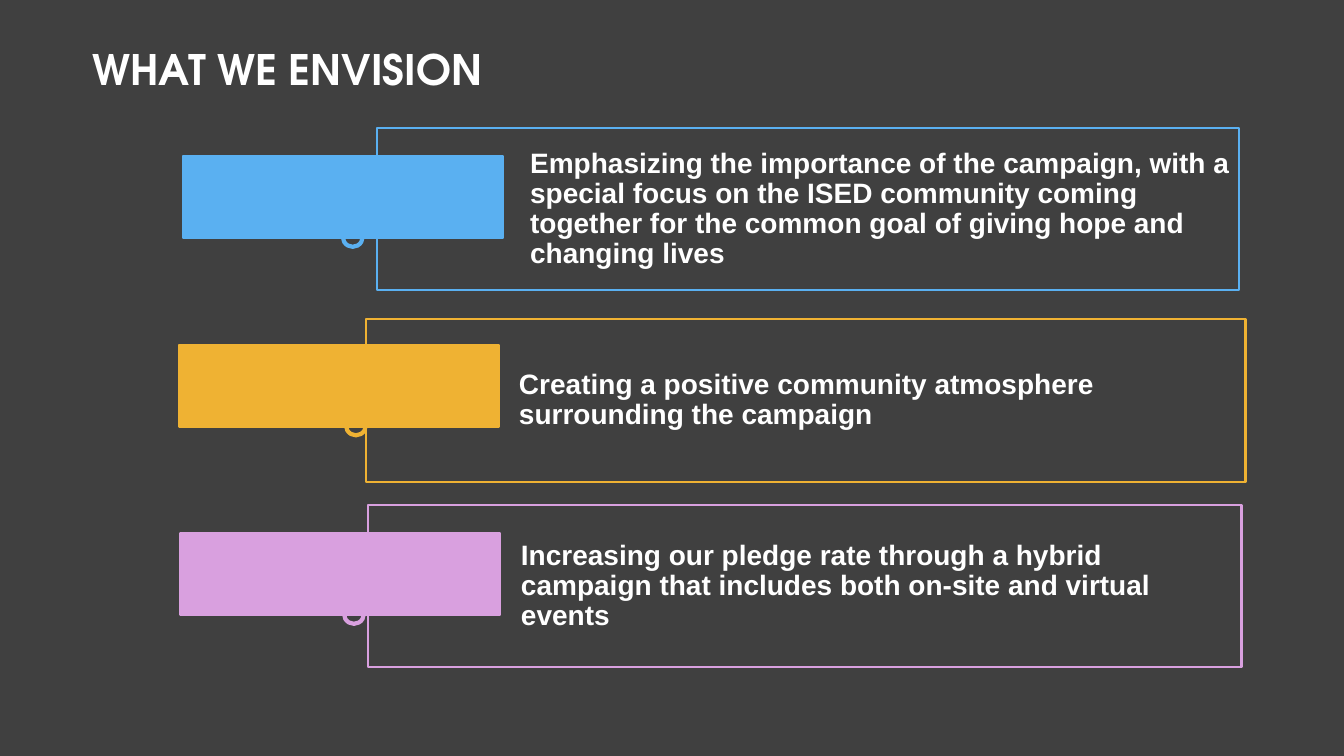
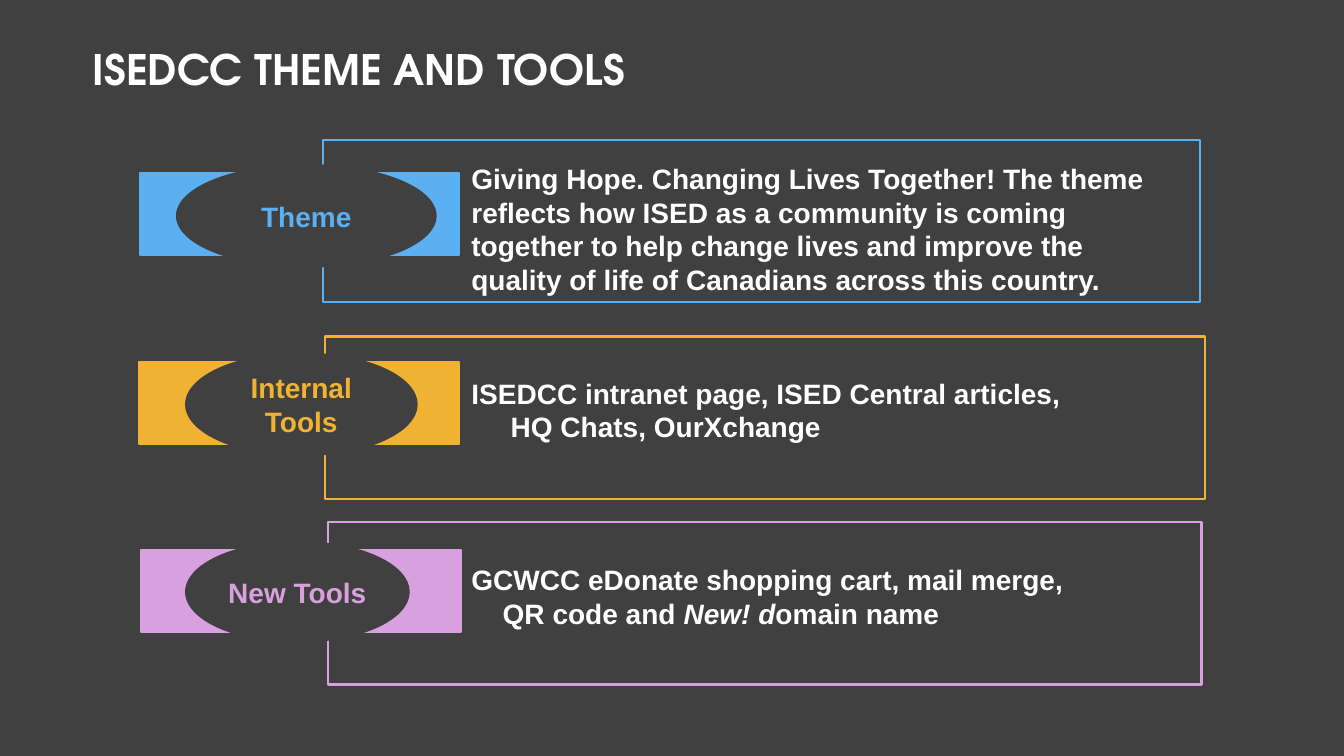
from dataclasses import dataclass

from lxml import etree
from pptx import Presentation
from pptx.dml.color import RGBColor
from pptx.enum.shapes import MSO_SHAPE
from pptx.enum.text import MSO_ANCHOR, MSO_AUTO_SIZE, PP_ALIGN
from pptx.util import Cm, Pt

RECT, OVAL = MSO_SHAPE.RECTANGLE, MSO_SHAPE.OVAL
TOP, MIDDLE = MSO_ANCHOR.TOP, MSO_ANCHOR.MIDDLE
LEFT, CENTER = PP_ALIGN.LEFT, PP_ALIGN.CENTER
FIXED = MSO_AUTO_SIZE.NONE


@dataclass(frozen=True)
class Theme:
    back: str = "404040"
    text: str = "FFFFFF"
    rows: tuple = ("5AB0F1", "EFB233", "D9A0DF")
    head: str = "TeX Gyre Adventor"
    body: str = "Arial"
    big: int = 30
    size: int = 20
    line: float = 1.5


THEME = Theme()
TITLE = (2.08, 0.53, 29.57, 2.54)
BAR_W, BAR_H = 8.05, 2.06
BOX_H = 4.09
PITCH = 4.75
RING = 0.5

GOALS = (
    ((9.5, 3.23, 21.72), 4.62, 8.89,
     "Emphasizing the importance of the campaign, with a special focus on the "
     "ISED community coming together for the common goal of giving hope and "
     "changing lives"),
    ((9.22, 8.05, 22.17), 4.52, 8.97,
     "Creating a positive community atmosphere surrounding the campaign"),
    ((9.27, 12.73, 22.02), 4.55, 8.92,
     "Increasing our pledge rate through a hybrid campaign that includes both "
     "on-site and virtual events"),
)

TOOLS = (
    ((8.15, 3.53, 22.1), 3.53, "Theme", (4.47, 6.5, 2.54),
     (11.63, 3.94, 17.98, 3.68), 0,
     [[("Giving Hope. Changing Lives Together! The theme reflects how ISED as a "
        "community is coming together to help change lives and improve the "
        "quality of life of Canadians across this country.", False)]]),
    ((8.2, 8.48, 22.17), 3.51, "Internal Tools", (4.7, 5.79, 2.54),
     (11.63, 9.35, 17.98, 1.96), 0.99,
     [[("ISEDCC intranet page, ISED Central articles,", False)],
      [("HQ Chats, OurXchange", False)]]),
    ((8.26, 13.16, 22.02), 3.56, "New Tools", (4.7, 5.59, 2.49),
     (11.63, 14.05, 17.53, 1.96), 0.79,
     [[("GCWCC eDonate shopping cart, mail merge,", False)],
      [("QR code and ", False), ("New! d", True), ("omain name", False)]]),
)


def rgb(tone):
    return RGBColor.from_string(tone)


def place(box):
    return [Cm(n) for n in box]


def add_run(para, text, tone=THEME.text, font=THEME.body, size=THEME.size,
            slant=False):
    run = para.add_run()
    run.text = text
    run.font.name = font
    run.font.size = Pt(size)
    run.font.bold = True
    run.font.italic = slant
    run.font.color.rgb = rgb(tone)


def set_frame(shape, anchor, pads, align=LEFT):
    frame = shape.text_frame
    frame.word_wrap = True
    frame.auto_size = FIXED
    frame.vertical_anchor = anchor
    (frame.margin_left, frame.margin_top,
     frame.margin_right, frame.margin_bottom) = place(pads)
    para = frame.paragraphs[0]
    para.alignment = align
    return para


def add_shape(slide, kind, box, line, fill=None, width=THEME.line):
    shape = slide.shapes.add_shape(kind, *place(box))
    shape.shadow.inherit = False
    if fill:
        shape.fill.solid()
        shape.fill.fore_color.rgb = rgb(fill)
    else:
        shape.fill.background()
    shape.line.color.rgb = rgb(line)
    shape.line.width = Pt(width)
    return shape


def add_box(slide, spot, tone):
    return add_shape(slide, RECT, (*spot, BOX_H), tone)


def add_bar(slide, left, top, tone):
    add_shape(slide, RECT, (left, top, BAR_W, BAR_H), tone, tone)


def add_ring(slide, mid, base, tone):
    box = (mid - RING / 2, base - 0.28, RING, RING)
    add_shape(slide, OVAL, box, tone, width=3)


def add_label(slide, box, text, tone):
    oval = add_shape(slide, OVAL, box, THEME.back, THEME.back, 2)
    add_run(set_frame(oval, MIDDLE, (0, 0, 0, 0), CENTER), text, tone)


def add_note(slide, box, hang, lines):
    note = slide.shapes.add_textbox(*place(box))
    para = set_frame(note, TOP, (0.25, 0.13, 0.25, 0.13))
    props = para._p.get_or_add_pPr()
    props.set("marL", str(Cm(hang)))
    props.set("indent", str(-Cm(hang)))
    for row, runs in enumerate(lines):
        if row:
            para.add_line_break()
        for text, slant in runs:
            add_run(para, text, slant=slant)


def add_slide(deck, text):
    slide = deck.slides.add_slide(deck.slide_layouts[5])
    title = slide.shapes.title
    title.left, title.top, title.width, title.height = place(TITLE)
    para = set_frame(title, MIDDLE, (0.25, 0.13, 0.25, 0.13))
    para.line_spacing = 0.9
    add_run(para, text, font=THEME.head, size=THEME.big)
    return slide


def add_goals(deck):
    slide = add_slide(deck, "WHAT WE ENVISION")
    for row, (tone, goal) in enumerate(zip(THEME.rows, GOALS)):
        spot, left, mid, text = goal
        top = 3.94 + row * PITCH
        box = add_box(slide, spot, tone)
        para = set_frame(box, MIDDLE, (3.86, 0.2, 0.2, 0.2))
        para.line_spacing = 0.9
        add_run(para, text)
        add_ring(slide, mid, top + BAR_H, tone)
        add_bar(slide, left, top, tone)


def add_tools(deck):
    slide = add_slide(deck, "ISEDCC THEME AND TOOLS")
    for row, (tone, tool) in enumerate(zip(THEME.rows, TOOLS)):
        spot, left, name, (edge, wide, high), box, hang, lines = tool
        top = 4.37 + row * PITCH
        add_box(slide, spot, tone)
        add_bar(slide, left, top, tone)
        add_label(slide, (edge, top - 0.2, wide, high), name, tone)
        add_note(slide, box, hang, lines)


def main():
    deck = Presentation()
    deck.slide_width, deck.slide_height = Cm(33.87), Cm(19.05)
    fill = deck.slide_master.background.fill
    fill.solid()
    fill.fore_color.rgb = rgb(THEME.back)
    add_goals(deck)
    add_tools(deck)
    deck.save("out.pptx")


if __name__ == "__main__":
    main()
